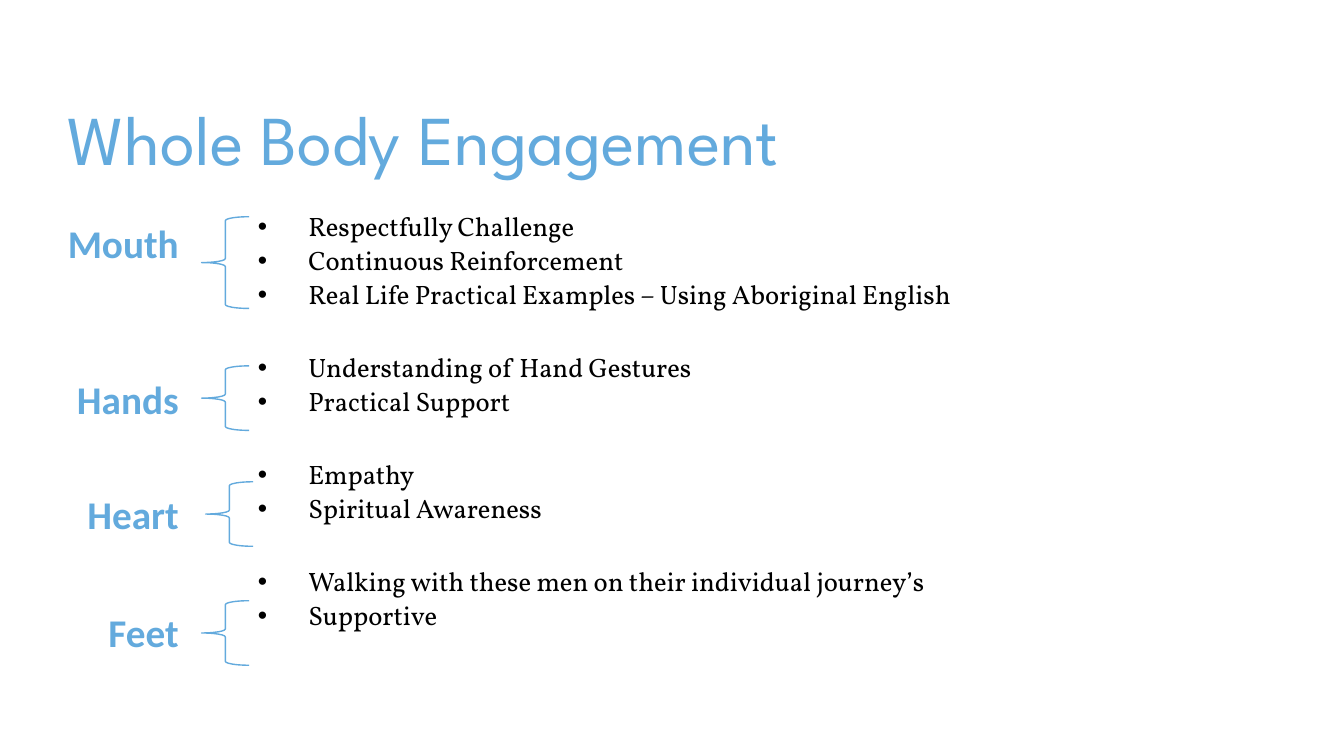
from lxml.etree import SubElement
from pptx import Presentation
from pptx.dml.color import RGBColor
from pptx.enum.shapes import MSO_SHAPE
from pptx.enum.text import MSO_ANCHOR, MSO_AUTO_SIZE, PP_ALIGN
from pptx.oxml.ns import qn
from pptx.util import Inches, Pt

COLOURS = {"accent": "63AADD", "text": "000000"}
LABEL_RIGHT = 1.87
GROUPS = [
    {"label": "Mouth", "label_at": (0, 2.13), "brace": (2, 2.15, 0.91),
     "points": ["Respectfully Challenge", "Continuous Reinforcement",
                "Real Life Practical Examples – Using Aboriginal English"]},
    {"label": "Hands", "label_at": (0, 3.67), "brace": (2, 3.63, 0.64),
     "points": ["Understanding of Hand Gestures", "Practical Support"]},
    {"label": "Heart", "label_at": (0.54, 4.82), "brace": (2.04, 4.78, 0.64),
     "points": ["Empathy", "Spiritual Awareness"]},
    {"label": "Feet", "label_at": (0.54, 5.99), "brace": (2, 5.96, 0.64),
     "points": ["Walking with these men on their individual journey’s", "Supportive"]},
]


class SlideBuilder:
    def __init__(self, slide):
        self.slide = slide

    def style(self, paragraph, font, size, colour, bold=False):
        paragraph.font.name = font
        paragraph.font.size = Pt(size)
        paragraph.font.bold = bold
        paragraph.font.color.rgb = RGBColor.from_string(COLOURS[colour])

    def text_frame(self, left, top, width, height):
        box = self.slide.shapes.add_textbox(
            Inches(left), Inches(top), Inches(width), Inches(height))
        box.text_frame.word_wrap = True
        return box.text_frame

    def title(self, text):
        title = self.slide.shapes.title
        title.left, title.top = Inches(0.67), Inches(0.77)
        title.width, title.height = Inches(12), Inches(1.01)
        frame = title.text_frame
        frame.auto_size = MSO_AUTO_SIZE.NONE
        frame.vertical_anchor = MSO_ANCHOR.BOTTOM
        frame.margin_left = frame.margin_right = frame.margin_bottom = 0
        frame.margin_top = Inches(0.05)
        frame.text = text
        paragraph = frame.paragraphs[0]
        paragraph.alignment = PP_ALIGN.LEFT
        self.style(paragraph, "League Spartan", 50, "accent")

    def label(self, text, left, top):
        frame = self.text_frame(left, top, LABEL_RIGHT - left, 0.57)
        frame.text = text
        paragraph = frame.paragraphs[0]
        paragraph.alignment = PP_ALIGN.RIGHT
        self.style(paragraph, "Calibri", 28, "accent", bold=True)

    def brace(self, left, top, height):
        brace = self.slide.shapes.add_shape(
            MSO_SHAPE.LEFT_BRACE, Inches(left), Inches(top), Inches(0.47), Inches(height))
        brace.shadow.inherit = False
        brace.fill.background()
        brace.line.color.rgb = RGBColor.from_string(COLOURS["accent"])
        brace.line.width = Pt(1)

    def bullets(self, groups):
        frame = self.text_frame(1.96, 2.07, 10.7, 4.96)
        paragraph = None
        for points in groups:
            for index, point in enumerate(points):
                first = paragraph is None
                paragraph = frame.paragraphs[0] if first else frame.add_paragraph()
                paragraph.text = point
                self.bullet(paragraph)
                paragraph.line_spacing = 0.9
                paragraph.space_before = Pt(0 if first else 3.8 if index else 31.5)
                self.style(paragraph, "Vollkorn", 19, "text")

    def bullet(self, paragraph):
        properties = paragraph._p.get_or_add_pPr()
        properties.set("marL", str(Inches(1)))
        properties.set("indent", str(Inches(-0.5)))
        SubElement(properties, qn("a:buFont"), typeface="Arial")
        SubElement(properties, qn("a:buChar"), char="•")


def main():
    deck = Presentation()
    deck.slide_width, deck.slide_height = Inches(13.33), Inches(7.5)
    builder = SlideBuilder(deck.slides.add_slide(deck.slide_layouts[5]))
    builder.title("Whole Body Engagement")
    builder.bullets([group["points"] for group in GROUPS])
    for group in GROUPS:
        builder.label(group["label"], *group["label_at"])
        builder.brace(*group["brace"])
    deck.save("out.pptx")


if __name__ == "__main__":
    main()
